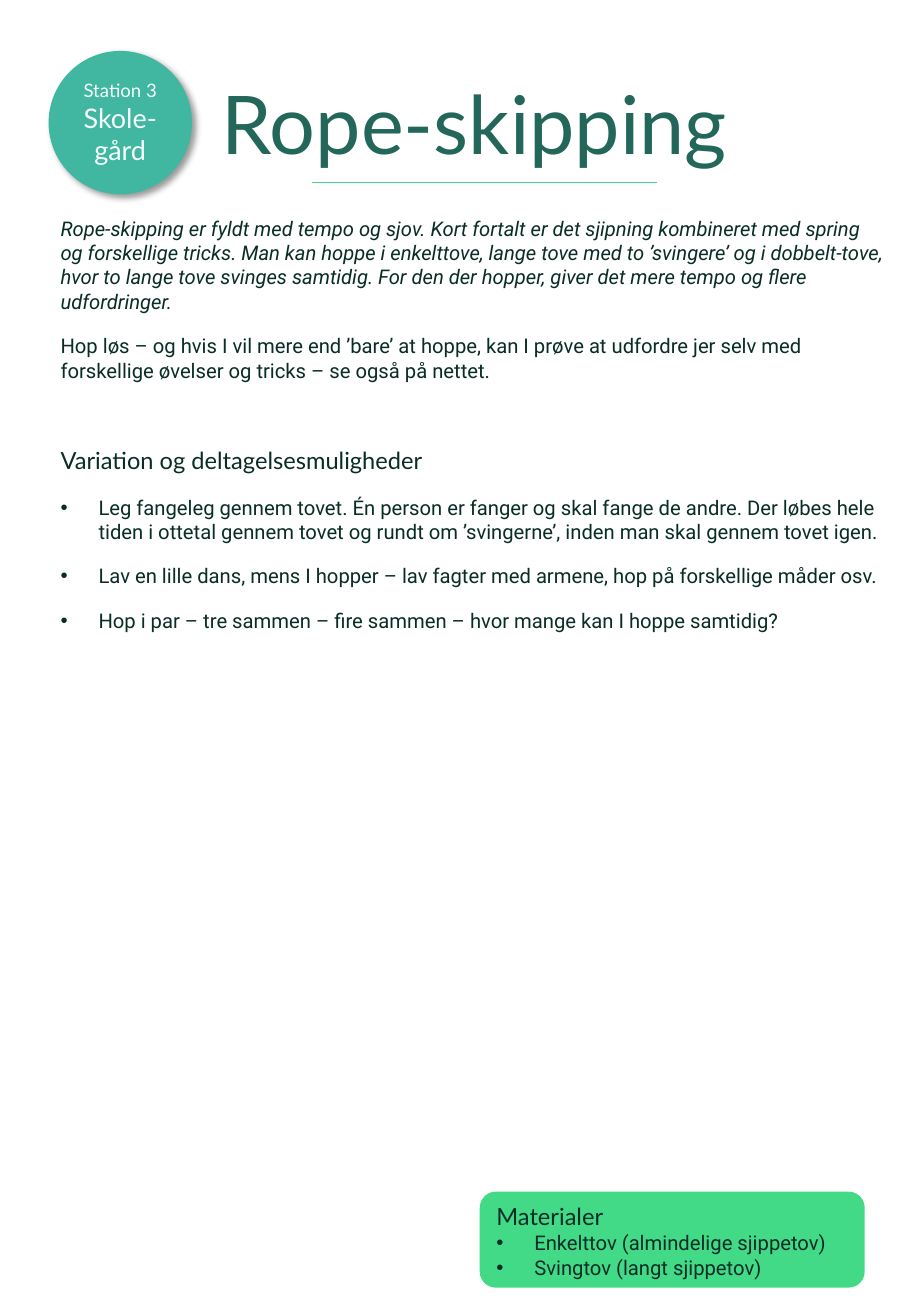
from lxml import etree
from pptx import Presentation
from pptx.dml.color import RGBColor
from pptx.enum import shapes as kinds, text as t
from pptx.oxml.ns import qn
from pptx.util import Pt

DARK, DEEP, TEAL, GREEN, PALE = "092D26", "23675B", "41B7A2", "42D987", "F6FEFD"


def style(font, size, name, color, italic=False):
    font.size, font.name, font.italic = Pt(size), name, italic
    font.color.rgb = RGBColor.from_string(color)


def write(frame, lines):
    """Fill a frame from (text, size, font, space before, bulleted, italic) rows."""
    for index, (words, size, name, before, bulleted, italic) in enumerate(lines):
        line = frame.add_paragraph() if index else frame.paragraphs[0]
        line.text = words
        line.alignment = t.PP_ALIGN.LEFT
        line.space_before = Pt(before)
        if bulleted:
            props = line._p.get_or_add_pPr()
            props.set("marL", str(Pt(22.5)))
            props.set("indent", str(Pt(-22.5)))
            etree.SubElement(props, qn("a:buFont"), typeface="Arial")
            etree.SubElement(props, qn("a:buChar"), char="•")
        style(line.runs[0].font, size, name, DARK, italic)


deck = Presentation()
deck.slide_width, deck.slide_height = Pt(540), Pt(780)
slide = deck.slides.add_slide(deck.slide_layouts[5])

# Title with the rule below it
title = slide.shapes.title
title.left, title.top, title.width, title.height = Pt(71.3), Pt(39.6), Pt(419.8), Pt(65.5)
title.text_frame.text = "Rope-skipping"
title.text_frame.auto_size = t.MSO_AUTO_SIZE.NONE
heading = title.text_frame.paragraphs[0]
heading.alignment = t.PP_ALIGN.CENTER
style(heading.runs[0].font, 48, "Lato", DEEP)

rule = slide.shapes.add_connector(
    kinds.MSO_CONNECTOR.STRAIGHT, Pt(185), Pt(108), Pt(389.5), Pt(108))
rule.line.width = Pt(0.5)
rule.line.color.rgb = RGBColor.from_string(GREEN)
etree.SubElement(rule._element.spPr, qn("a:effectLst"))

# Activity description
description = slide.shapes.add_textbox(Pt(28.8), Pt(124.6), Pt(503.3), Pt(257)).text_frame
description.word_wrap = True
write(description, [
    ("Rope-skipping er fyldt med tempo og sjov. Kort fortalt er det sjipning kombineret "
     "med spring og forskellige tricks. Man kan hoppe i enkelttove, lange tove med to "
     "’svingere’ og i dobbelt-tove, hvor to lange tove svinges samtidig. For den der "
     "hopper, giver det mere tempo og flere udfordringer.", 12, "Roboto", 0, False, True),
    ("Hop løs – og hvis I vil mere end ’bare’ at hoppe, kan I prøve at udfordre jer selv "
     "med forskellige øvelser og tricks – se også på nettet.", 12, "Roboto", 12, False, False),
    ("Variation og deltagelsesmuligheder", 14, "Lato", 38, False, False),
    ("Leg fangeleg gennem tovet. Én person er fanger og skal fange de andre. Der løbes "
     "hele tiden i ottetal gennem tovet og rundt om ’svingerne’, inden man skal gennem "
     "tovet igen.", 12, "Roboto", 12, True, False),
    ("Lav en lille dans, mens I hopper – lav fagter med armene, hop på forskellige måder "
     "osv.", 12, "Roboto", 12, True, False),
    ("Hop i par – tre sammen – fire sammen – hvor mange kan I hoppe samtidig?",
     12, "Roboto", 12, True, False),
])

# Station badge and materials box
badge = slide.shapes.add_shape(
    kinds.MSO_SHAPE.OVAL, Pt(28.8), Pt(30.2), Pt(85), Pt(85))
materials = slide.shapes.add_shape(
    kinds.MSO_SHAPE.ROUNDED_RECTANGLE, Pt(284.4), Pt(706.3), Pt(228.2), Pt(56.9))
for panel, color in ((badge, TEAL), (materials, GREEN)):
    panel.shadow.inherit = False
    panel.fill.solid()
    panel.fill.fore_color.rgb = RGBColor.from_string(color)
    panel.line.fill.background()
    panel.text_frame.word_wrap = True

effects = badge._element.spPr.find(qn("a:effectLst"))
shadow = etree.SubElement(effects, qn("a:outerShdw"), blurRad=str(Pt(4)), dist=str(Pt(3)),
                          dir="2700000", algn="tl", rotWithShape="0")
black = etree.SubElement(shadow, qn("a:srgbClr"), val="000000")
etree.SubElement(black, qn("a:alpha"), val="40000")

badge.text_frame.vertical_anchor = t.MSO_ANCHOR.MIDDLE
station = badge.text_frame.paragraphs[0]
station.alignment = t.PP_ALIGN.CENTER
for words, size in (("Station 3 ", 11), ("Skole-gård", 16)):
    run = station.add_run()
    run.text = words
    style(run.font, size, "Lato", PALE)

materials.text_frame.vertical_anchor = t.MSO_ANCHOR.TOP
write(materials.text_frame, [
    ("Materialer", 14, "Lato", 0, False, False),
    ("Enkelttov (almindelige sjippetov)", 12, "Roboto", 0, True, False),
    ("Svingtov (langt sjippetov)", 12, "Roboto", 0, True, False),
])

deck.save("out.pptx")
